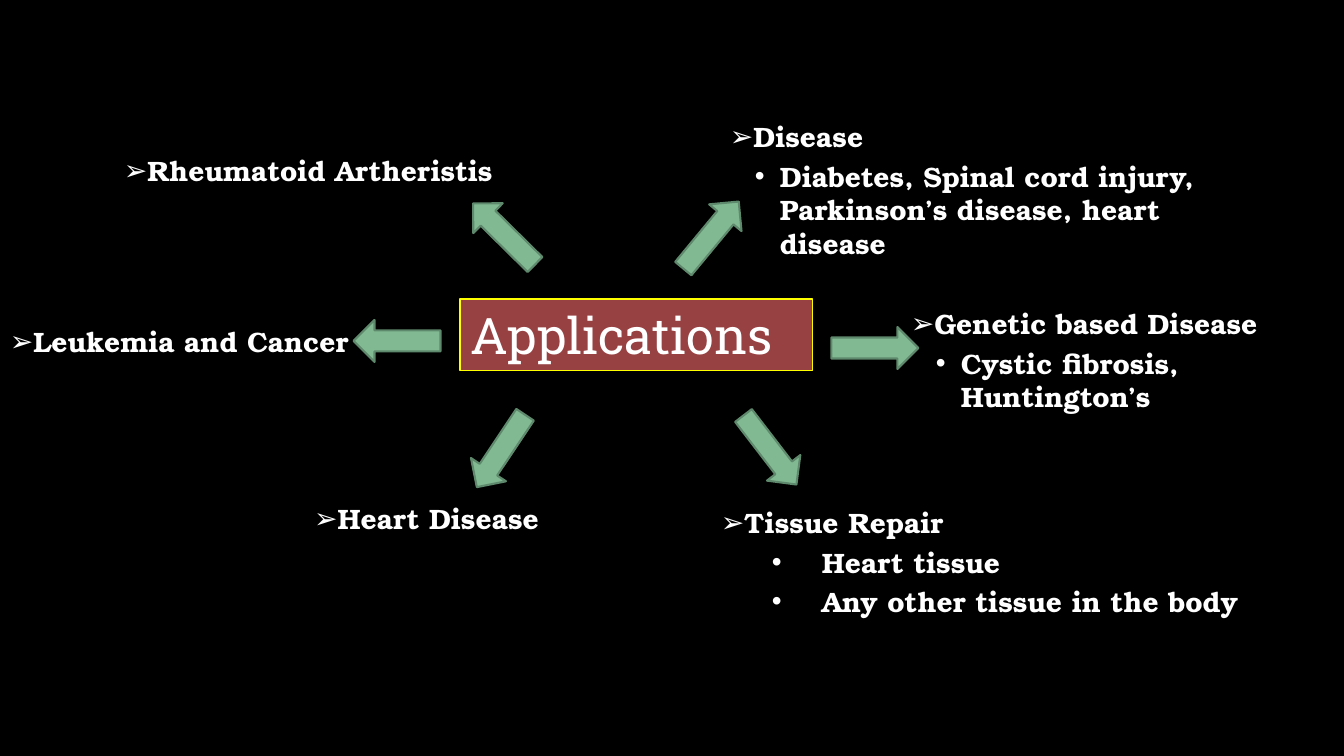
from lxml.etree import SubElement as Sub
from pptx import Presentation as Deck
from pptx.dml.color import RGBColor as Rgb
from pptx.enum.shapes import MSO_SHAPE as Kind
from pptx.enum.text import MSO_ANCHOR as Anchor, MSO_AUTO_SIZE as Fit, PP_ALIGN as Align
from pptx.oxml.ns import qn
from pptx.util import Pt

SCALE = 914400 / 100.8


def px(n):
    return round(n * SCALE)


def tint(color, code):
    color.rgb = Rgb.from_string(code)


class Board:
    """Style and current slide of the applications map."""

    ink, ground = "FFFFFF", "000000"
    red, yellow = "984143", "FFFF00"
    green, edge = "81B992", "5F896C"
    head, body = "Roboto Slab", "TeX Gyre Bonum"

    def __init__(self, deck):
        self.slide = deck.slides.add_slide(deck.slide_layouts[5])
        fill = self.slide.background.fill
        fill.solid()
        tint(fill.fore_color, self.ground)

    def paint(self, shape, fill, line, width):
        shape.fill.solid()
        tint(shape.fill.fore_color, fill)
        tint(shape.line.color, line)
        shape.line.width = Pt(width)

    def type(self, par, name, size, bold):
        font = par.font
        font.name, font.size, font.bold = name, Pt(size), bold
        tint(font.color, self.ink)

    def title(self, text, x, y, w, h):
        box = self.slide.shapes.title
        box.left, box.top, box.width, box.height = map(px, (x, y, w, h))
        self.paint(box, self.red, self.yellow, 0.75)
        frame = box.text_frame
        frame.text = text
        frame.word_wrap, frame.auto_size = True, Fit.NONE
        frame.vertical_anchor = Anchor.TOP
        par = frame.paragraphs[0]
        par.alignment = Align.LEFT
        self.type(par, self.head, 36, False)

    def bullet(self, par, mark, left, hang):
        props = par._p.get_or_add_pPr()
        props.set("marL", str(px(left)))
        props.set("indent", str(px(-hang)))
        Sub(props, qn("a:buFont")).set("typeface", "Arial")
        Sub(props, qn("a:buChar")).set("char", mark)

    def topic(self, x, y, w, h, name, items=(), left=50, hang=25, align=Align.LEFT):
        box = self.slide.shapes.add_textbox(*map(px, (x, y, w, h)))
        frame = box.text_frame
        frame.word_wrap, frame.auto_size = True, Fit.SHAPE_TO_FIT_TEXT
        for i, text in enumerate((name, *items)):
            par = frame.add_paragraph() if i else frame.paragraphs[0]
            par.text, par.alignment = text, align
            par.space_before = Pt(4)
            if i:
                par.level = 1
                self.bullet(par, "•", left, hang)
            else:
                self.bullet(par, "➢", 0, 0)
            self.type(par, self.body, 20, True)

    def arrow(self, x, y, turn, w=42, h=87):
        spot = map(px, (x - w / 2, y - h / 2, w, h))
        shape = self.slide.shapes.add_shape(Kind.DOWN_ARROW, *spot)
        shape.rotation = turn
        shape.shadow.inherit = False
        self.paint(shape, self.green, self.edge, 1.5)


def main():
    deck = Deck()
    deck.slide_width, deck.slide_height = px(1344), px(756)
    board = Board(deck)
    board.title("Applications", 460, 299, 353, 72)
    board.topic(720, 115, 555, 119, "Disease",
                ["Diabetes, Spinal cord injury, Parkinson’s disease, heart disease"])
    board.topic(901, 302, 429, 119, "Genetic based Disease",
                ["Cystic fibrosis, Huntington’s"])
    board.topic(711, 501, 563, 126, "Tissue Repair",
                ["Heart tissue", "Any other tissue in the body"], 101, 50)
    board.topic(13, 497, 536, 44, "Heart Disease", align=Align.RIGHT)
    board.topic(0, 320, 563, 44, "Leukemia and Cancer")
    board.topic(114, 149, 563, 44, "Rheumatoid Artheristis")
    for x, y, turn in [(504, 234, 134.6), (397, 341, 90), (770, 450, 322.5),
                       (875, 348, 270), (501, 451, 33.7), (711, 235, 219.6)]:
        board.arrow(x, y, turn)
    deck.save("out.pptx")


if __name__ == "__main__":
    main()
